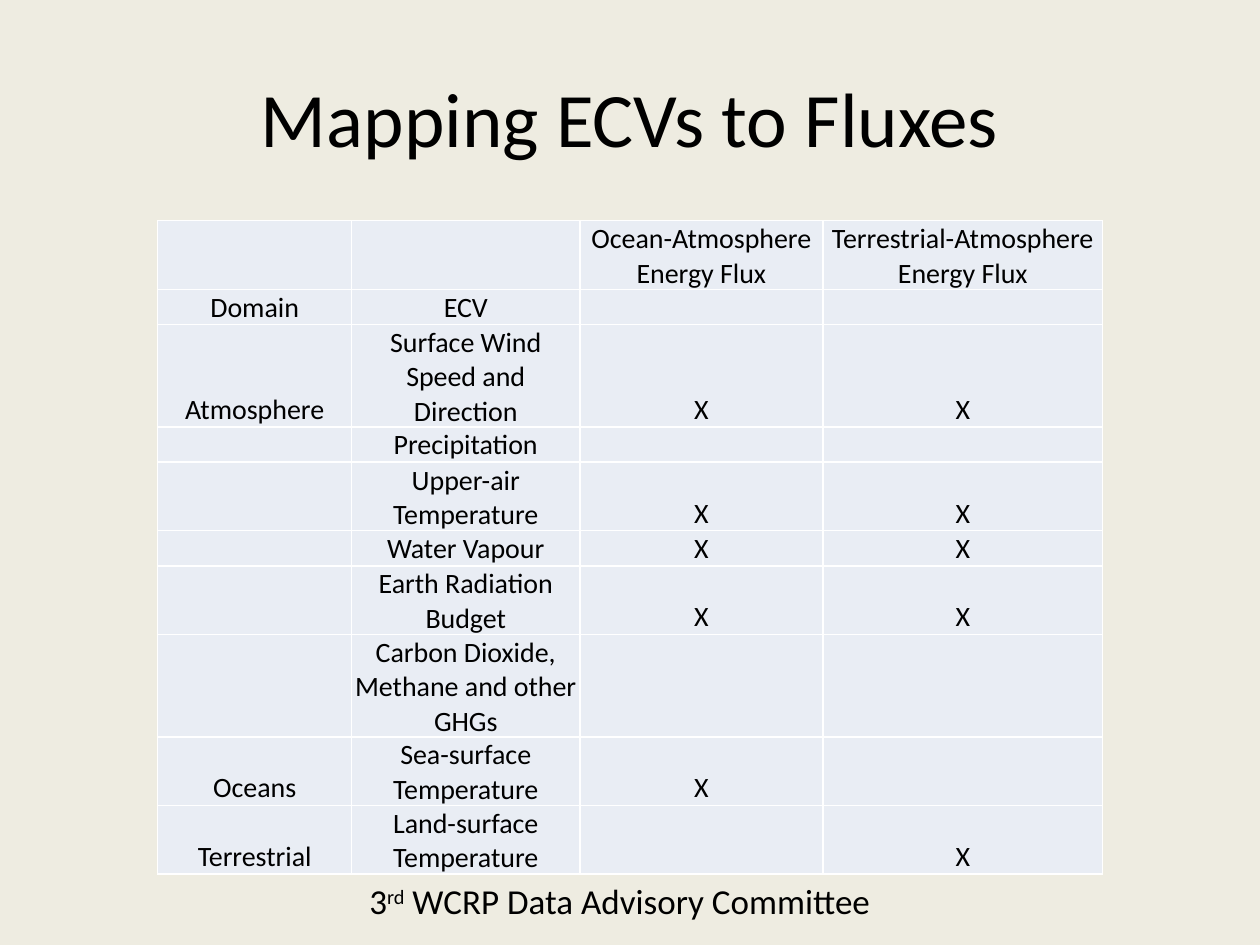
"""Build the slide that maps essential climate variables to energy fluxes."""
from typing import NamedTuple

from lxml import etree
from pptx import Presentation
from pptx.dml.color import RGBColor
from pptx.enum.text import MSO_ANCHOR, PP_ALIGN
from pptx.oxml.ns import qn
from pptx.util import Cm, Pt

CENTER = PP_ALIGN.CENTER
MIDDLE, BOTTOM = MSO_ANCHOR.MIDDLE, MSO_ANCHOR.BOTTOM
BLACK = RGBColor(0x00, 0x00, 0x00)
WHITE = RGBColor(0xFF, 0xFF, 0xFF)
CREAM = RGBColor(0xEE, 0xEC, 0xE1)
PALE_BLUE = RGBColor(0xE9, 0xED, 0xF4)
FONT = "Calibri"
CELL_SIZE = 16
LINE_HEIGHT = 0.61
COLUMN_WIDTHS = (3.91, 4.6, 4.9, 5.64)


class Row(NamedTuple):
    lines: int
    domain: str = ""
    ecv: str = ""
    ocean: str = ""
    land: str = ""


ROWS = (
    Row(2, ocean="Ocean-Atmosphere Energy Flux", land="Terrestrial-Atmosphere Energy Flux"),
    Row(1, "Domain", "ECV"),
    Row(3, "Atmosphere", "Surface Wind Speed and Direction", "X", "X"),
    Row(1, ecv="Precipitation"),
    Row(2, ecv="Upper-air Temperature", ocean="X", land="X"),
    Row(1, ecv="Water Vapour", ocean="X", land="X"),
    Row(2, ecv="Earth Radiation Budget", ocean="X", land="X"),
    Row(3, ecv="Carbon Dioxide, Methane and other GHGs"),
    Row(2, "Oceans", "Sea-surface Temperature", "X"),
    Row(2, "Terrestrial", "Land-surface Temperature", land="X"),
)


def add_text(p, text: str, *, size: float, baseline: int = 0) -> None:
    p.alignment = CENTER
    r = p.add_run()
    r.text = text
    r.font.name, r.font.size = FONT, Pt(size)
    r.font.color.rgb = BLACK
    if baseline:
        r.font._element.set("baseline", str(baseline * 1000))


def add_box(s, left: float, top: float, width: float, height: float):
    tf = s.shapes.add_textbox(Cm(left), Cm(top), Cm(width), Cm(height)).text_frame
    tf.word_wrap = True
    tf.vertical_anchor = MIDDLE
    return tf.paragraphs[0]


def add_borders(cell) -> None:
    tc_pr = cell._tc.get_or_add_tcPr()
    for side in ("a:lnL", "a:lnR", "a:lnT", "a:lnB"):
        ln = etree.SubElement(tc_pr, qn(side), w=str(Pt(1)))
        fill = etree.SubElement(ln, qn("a:solidFill"))
        etree.SubElement(fill, qn("a:srgbClr"), val=str(WHITE))


def fill_cell(cell, text: str) -> None:
    add_borders(cell)
    cell.fill.solid()
    cell.fill.fore_color.rgb = PALE_BLUE
    cell.vertical_anchor = BOTTOM
    cell.margin_left = cell.margin_right = cell.margin_top = Cm(0.03)
    cell.margin_bottom = Cm(0)
    p = cell.text_frame.paragraphs[0]
    if text:
        add_text(p, text, size=CELL_SIZE)
    else:
        etree.SubElement(p._p, qn("a:endParaRPr"), sz=str(CELL_SIZE * 100))


def add_flux_table(s) -> None:
    height = LINE_HEIGHT * sum(row.lines for row in ROWS)
    table = s.shapes.add_table(len(ROWS), len(COLUMN_WIDTHS), Cm(3.18), Cm(4.45),
                               Cm(sum(COLUMN_WIDTHS)), Cm(height)).table
    table.first_row = table.horz_banding = False
    for column, width in zip(table.columns, COLUMN_WIDTHS):
        column.width = Cm(width)
    for table_row, row in zip(table.rows, ROWS):
        table_row.height = Cm(LINE_HEIGHT * row.lines)
        for cell, text in zip(table_row.cells, row[1:]):
            fill_cell(cell, text)


def main() -> None:
    prs = Presentation()
    prs.slide_width, prs.slide_height = Cm(25.4), Cm(19.05)
    s = prs.slides.add_slide(prs.slide_layouts[6])
    s.background.fill.solid()
    s.background.fill.fore_color.rgb = CREAM

    add_text(add_box(s, 1.27, 0.76, 22.86, 3.18), "Mapping ECVs to Fluxes", size=44)
    add_flux_table(s)
    footer = add_box(s, 5.51, 17.65, 13.97, 1.02)
    add_text(footer, "3", size=20)
    add_text(footer, "rd", size=20, baseline=30)
    add_text(footer, " WCRP Data Advisory Committee", size=20)
    prs.save("out.pptx")


if __name__ == "__main__":
    main()
